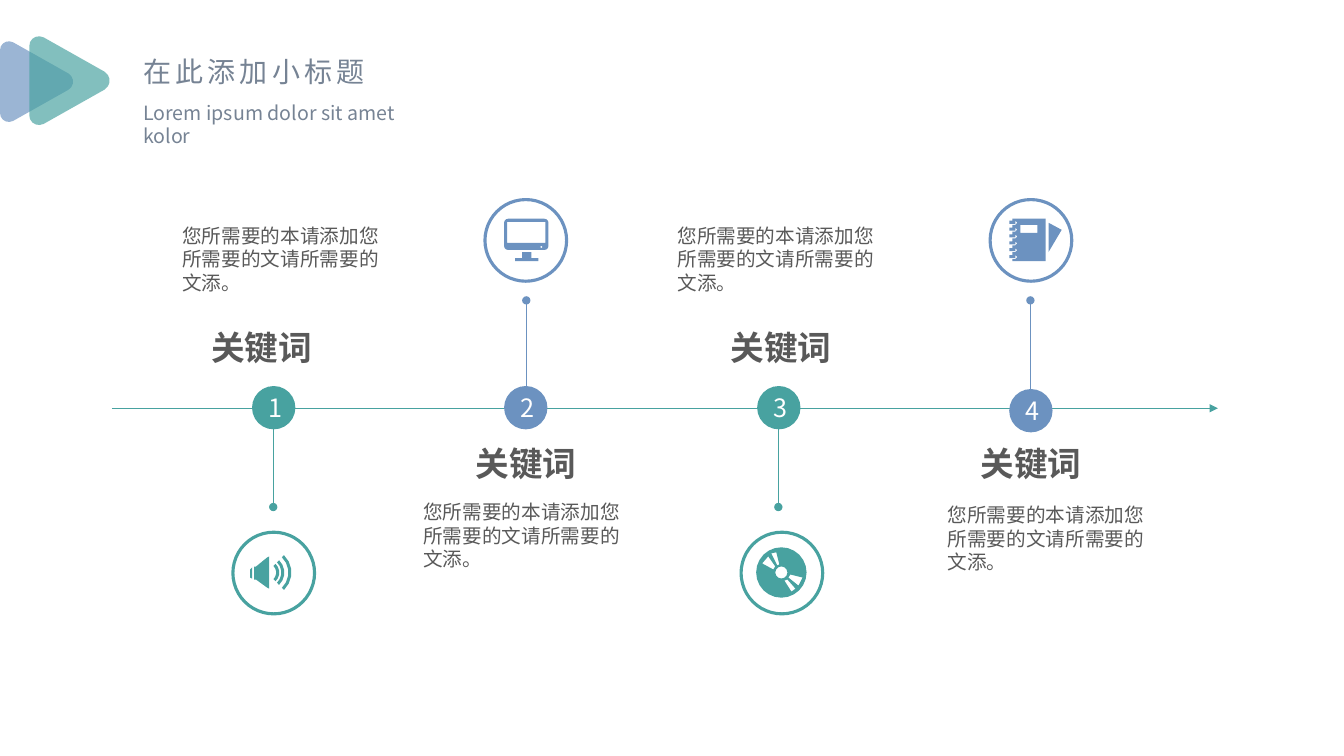
from dataclasses import dataclass
from math import ceil, cos, radians, sin

from lxml import etree
from pptx import Presentation
from pptx.dml.color import RGBColor
from pptx.enum.shapes import MSO_CONNECTOR, MSO_SHAPE
from pptx.enum.text import MSO_ANCHOR, MSO_AUTO_SIZE, PP_ALIGN
from pptx.oxml.ns import qn
from pptx.util import Inches, Pt

Point = tuple[float, float]
Contour = list[Point]

TEAL = RGBColor(0x48, 0xA2, 0xA0)
BLUE = RGBColor(0x6C, 0x92, 0xC0)
SLATE = RGBColor(0x76, 0x83, 0x94)
GREY = RGBColor(0x59, 0x59, 0x59)
WHITE = RGBColor(0xFF, 0xFF, 0xFF)
FONT = "Noto Sans CJK SC"
STRAIGHT = MSO_CONNECTOR.STRAIGHT
OVAL = MSO_SHAPE.OVAL
LEFT, CENTER = PP_ALIGN.LEFT, PP_ALIGN.CENTER
TOP, MIDDLE = MSO_ANCHOR.TOP, MSO_ANCHOR.MIDDLE
NO_FIT = MSO_AUTO_SIZE.NONE

BADGE_SIZE, RING_SIZE = 0.43, 0.81
KEYWORD = "关键词"
DETAIL = "您所需要的本请添加您所需要的文请所需要的文添。"


@dataclass(frozen=True)
class TextStyle:
    size: float
    color: RGBColor
    leading: float | None = None
    align: PP_ALIGN = LEFT
    anchor: MSO_ANCHOR = TOP
    bold: bool = False
    wrap: bool = True
    tracking: int = 0


TITLE = TextStyle(20, SLATE, wrap=False, tracking=300)
SUBTITLE = TextStyle(14, SLATE)
BODY = TextStyle(14, GREY)
HEADING = TextStyle(24, GREY, leading=0.94, align=CENTER, bold=True)
NUMBER = TextStyle(18, WHITE, align=CENTER, anchor=MIDDLE)


@dataclass(frozen=True)
class Stage:
    color: RGBColor
    axis: float
    stem: tuple[float, float]
    badge: Point
    ring: Point
    heading: Point
    detail: Point


STAGES = [
    Stage(TEAL, 2.71, (4.04, 5.03), (2.5, 3.83), (2.31, 5.28), (1.87, 3.23), (1.71, 2.17)),
    Stage(BLUE, 5.22, (2.98, 3.96), (5, 3.83), (4.81, 1.98), (4.49, 4.38), (4.1, 4.91)),
    Stage(TEAL, 7.72, (4.04, 5.03), (7.51, 3.83), (7.35, 5.28), (7.02, 3.23), (6.62, 2.17)),
    Stage(BLUE, 10.22, (2.98, 3.96), (10.01, 3.86), (9.82, 1.98), (9.5, 4.38), (9.3, 4.94)),
]


def box(left: float, top: float, width: float, height: float) -> list[int]:
    return [Inches(value) for value in (left, top, width, height)]


def write(shape, text: str, style: TextStyle) -> None:
    frame = shape.text_frame
    paragraph = frame.paragraphs[0]
    run = paragraph.add_run()
    run.text = text
    formats = [
        (frame, {"word_wrap": style.wrap, "auto_size": NO_FIT, "vertical_anchor": style.anchor}),
        (paragraph, {"alignment": style.align, "line_spacing": style.leading,
                     "space_before": Pt(0)}),
        (run.font, {"size": Pt(style.size), "bold": style.bold, "name": FONT}),
    ]
    for target, values in formats:
        for attribute, value in values.items():
            setattr(target, attribute, value)
    run.font.color.rgb = style.color
    properties = run.font._element
    etree.SubElement(properties, qn("a:ea"), typeface=FONT)
    if style.tracking:
        properties.set("spc", str(style.tracking))


def add_text(shapes, place: Point, size: Point, text: str, style: TextStyle) -> None:
    write(shapes.add_textbox(*box(*place, *size)), text, style)


def add_line(shapes, start: Point, end: Point, color: RGBColor, head: str, tail: str) -> None:
    connector = shapes.add_connector(STRAIGHT, *box(*start, *end))
    connector.line.color.rgb = color
    connector.line.width = Pt(0.5)
    for tag, kind in (("a:headEnd", head), ("a:tailEnd", tail)):
        etree.SubElement(connector.line._ln, qn(tag), type=kind)
    etree.SubElement(connector._element.spPr, qn("a:effectLst"))


def add_circle(shapes, place: Point, size: float):
    circle = shapes.add_shape(OVAL, *box(*place, size, size))
    circle.shadow.inherit = False
    return circle


def add_outline(shapes, contours: list[Contour], color: RGBColor, opacity: int = 100) -> None:
    """Fill closed contours as one freeform; inner contours become holes."""
    emu = [[(Inches(x), Inches(y)) for x, y in contour] for contour in contours]
    builder = shapes.build_freeform(*emu[0][0], scale=1.0)
    for index, (start, *rest) in enumerate(emu):
        if index:
            builder.move_to(*start)
        builder.add_line_segments(rest, close=True)
    shape = builder.convert_to_shape()
    shape.shadow.inherit = False
    shape.fill.solid()
    shape.fill.fore_color.rgb = color
    shape.line.fill.background()
    if opacity < 100:
        tint = shape._element.spPr.find(f".//{qn('a:srgbClr')}")
        etree.SubElement(tint, qn("a:alpha"), val=str(opacity * 1000))


def arc(x: float, y: float, radius: float, start: int, end: int, step: int = 30) -> Contour:
    count = ceil(abs(end - start) / step)
    angles = [radians(start + (end - start) * i / count) for i in range(count + 1)]
    return [(x + radius * cos(a), y + radius * sin(a)) for a in angles]


def circle_contour(x: float, y: float, radius: float, sides: int) -> Contour:
    return arc(x, y, radius, 0, 360, 360 // sides)[:-1]


def bezier(a: Point, b: Point, c: Point, d: Point) -> Contour:
    def blend(t: float, axis: int) -> float:
        u = 1 - t
        return (u**3 * a[axis] + 3 * u * u * t * b[axis]
                + 3 * u * t * t * c[axis] + t**3 * d[axis])
    return [(blend(i / 5, 0), blend(i / 5, 1)) for i in range(6)]


def rectangle(left: float, top: float, width: float, height: float) -> Contour:
    right, bottom = left + width, top + height
    return [(left, top), (right, top), (right, bottom), (left, bottom)]


def rounded_rectangle(left: float, top: float, width: float, height: float, r: float) -> Contour:
    corners = rectangle(left + r, top + r, width - 2 * r, height - 2 * r)
    return [point for i, (x, y) in enumerate(corners)
            for point in arc(x, y, r, 180 + 90 * i, 270 + 90 * i)]


def rounded_triangle(left: float, middle: float, scale: float) -> Contour:
    corners = [
        [(0.13, -0.39), (0.07, -0.42), (0, -0.38), (0, -0.31)],
        [(0, 0.31), (0, 0.38), (0.07, 0.42), (0.13, 0.39)],
        [(0.68, 0.08), (0.74, 0.04), (0.74, -0.04), (0.68, -0.08)],
    ]
    return [(left + scale * x, middle + scale * y)
            for corner in corners for x, y in bezier(*corner)]


def draw_speaker(shapes) -> None:
    horn = [(2.65, 5.53), (2.54, 5.62), (2.52, 5.62), (2.52, 5.75),
            (2.54, 5.75), (2.65, 5.83), (2.67, 5.84), (2.67, 5.52)]
    back = [(2.48, 5.65), (2.48, 5.73), (2.5, 5.74), (2.5, 5.63)]
    waves = [arc(2.65, 5.68, r, -46, 46, 20) + arc(2.65, 5.68, r - 0.03, 46, -46, 20)
             for r in (0.12, 0.17, 0.24)]
    for part in (horn, back, *waves):
        add_outline(shapes, [part], TEAL)


def draw_monitor(shapes) -> None:
    stand = [(5.11, 2.59), (5.11, 2.56), (5.18, 2.56), (5.18, 2.5),
             (5.27, 2.5), (5.27, 2.56), (5.34, 2.56), (5.34, 2.59)]
    add_outline(shapes, [rounded_rectangle(5, 2.17, 0.44, 0.31, 0.04), stand,
                         rectangle(5.03, 2.2, 0.38, 0.21),
                         circle_contour(5.37, 2.45, 0.01, 8)], BLUE)


def draw_disc(shapes) -> None:
    glints = [
        [(7.71, 5.61), (7.73, 5.6), (7.7, 5.48), (7.65, 5.49)],
        [(7.81, 5.75), (7.78, 5.76), (7.85, 5.87), (7.89, 5.84)],
        [(7.96, 5.73), (7.84, 5.7), (7.82, 5.73), (7.92, 5.81)],
        [(7.56, 5.59), (7.67, 5.65), (7.69, 5.62), (7.62, 5.52)],
    ]
    add_outline(shapes, [circle_contour(7.75, 5.68, 0.25, 24),
                         circle_contour(7.75, 5.68, 0.06, 12), *glints], TEAL)


def draw_notebook(shapes) -> None:
    ring = [(10.04, 0), (10.01, 0), (10.01, 0.03), (10.07, 0.03),
            (10.07, 0), (10.09, 0.02), (10.07, 0.04), (10.04, 0.04)]
    spine = [(x, 2.19 + 0.34 * i / 5 + y) for i in range(6) for x, y in ring]
    cover = [(10.04, 2.17), *spine, (10.04, 2.59), (10.37, 2.59), (10.37, 2.17)]
    pen = [(10.4, 2.21), (10.4, 2.5), (10.53, 2.28)]
    add_outline(shapes, [pen, cover, rectangle(10.12, 2.23, 0.17, 0.08)], BLUE)


def draw_stage(shapes, number: int, stage: Stage) -> None:
    start, end = stage.stem
    add_line(shapes, (stage.axis, start), (stage.axis, end), stage.color, "oval", "oval")
    badge = add_circle(shapes, stage.badge, BADGE_SIZE)
    badge.fill.solid()
    badge.fill.fore_color.rgb = stage.color
    badge.line.fill.background()
    write(badge, str(number), NUMBER)
    ring = add_circle(shapes, stage.ring, RING_SIZE)
    ring.fill.background()
    ring.line.color.rgb = stage.color
    ring.line.width = Pt(2.25)
    add_text(shapes, stage.detail, (2.25, 0.81), DETAIL, BODY)
    add_text(shapes, stage.heading, (1.45, 0.48), KEYWORD, HEADING)


def main() -> None:
    deck = Presentation()
    deck.slide_width, deck.slide_height = Inches(13.33), Inches(7.5)
    slide = deck.slides.add_slide(deck.slide_layouts[0])
    shapes = slide.shapes
    headers = [
        (shapes.title, (1.32, 0.49, 2.46, 0.44), "在此添加小标题", TITLE),
        (slide.placeholders[1], (1.32, 0.95, 3.19, 0.34), "Lorem ipsum dolor sit amet kolor", SUBTITLE),
    ]
    for holder, place, text, style in headers:
        holder.left, holder.top, holder.width, holder.height = box(*place)
        write(holder, text, style)
    add_outline(shapes, [rounded_triangle(0, 0.81, 1)], BLUE, 68)
    add_outline(shapes, [rounded_triangle(0.29, 0.8, 1.1)], TEAL, 68)
    add_line(shapes, (1.11, 4.05), (12.08, 4.05), TEAL, "none", "triangle")
    for number, stage in enumerate(STAGES, start=1):
        draw_stage(shapes, number, stage)
    for draw_icon in (draw_speaker, draw_monitor, draw_disc, draw_notebook):
        draw_icon(shapes)
    deck.save("out.pptx")


if __name__ == "__main__":
    main()
